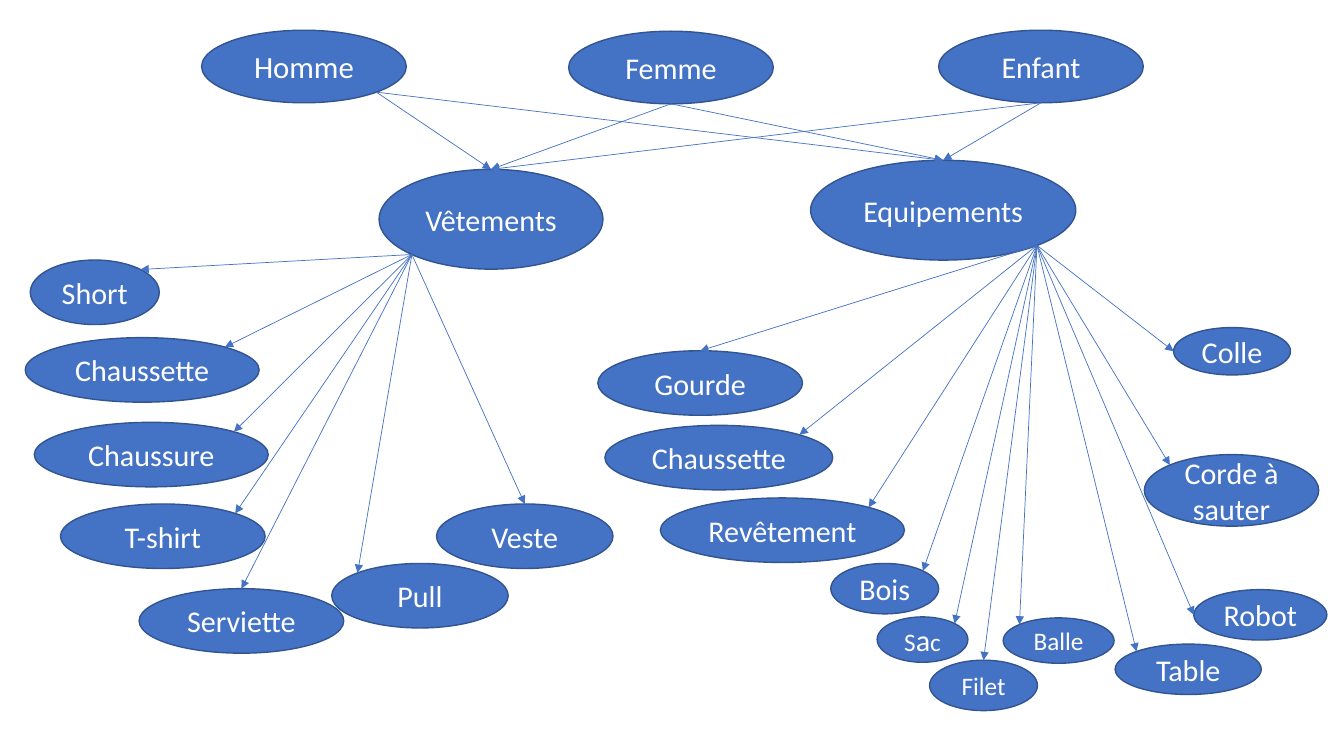
from math import sqrt

from lxml.etree import SubElement
from pptx import Presentation
from pptx.dml.color import RGBColor
from pptx.enum.shapes import MSO_CONNECTOR as CONN, MSO_SHAPE as SHAPE
from pptx.enum.text import MSO_ANCHOR as ANCHOR, PP_ALIGN as ALIGN
from pptx.oxml.ns import qn
from pptx.util import Inches, Pt

BLUE = RGBColor(0x44, 0x72, 0xC4)
OUTLINE = RGBColor(0x32, 0x54, 0x91)
WHITE = RGBColor(0xFF, 0xFF, 0xFF)
FONT = "Calibri"
SIZE, SMALL = 21.5, 18

# The slide is a grid of square cells; boxes and nodes are given in cells
CELL = Inches(0.1)

# Points on an ellipse, as shares of its half width and half height
DIAG = 1 / sqrt(2)
POINTS = {
    "top": (0, -1), "left": (-1, 0), "bottom": (0, 1),
    "top left": (-DIAG, -DIAG), "top right": (DIAG, -DIAG),
    "bottom left": (-DIAG, DIAG), "bottom right": (DIAG, DIAG),
}

# Nodes: text, column, row, columns wide, rows high, linked point, font size
AUDIENCE_BOX = (20, 3)
AUDIENCE = [
    ("Homme", 0, 0, 20.3, 7.2, "bottom right", 22),
    ("Femme", 36.4, 0.1, 20.3, 7.2, "bottom", SIZE),
    ("Enfant", 73.1, 0, 20.3, 7.2, "bottom", SIZE),
]
CLOTHES_BOX = (2.5, 16.8)
CLOTHES = [
    ("Vêtements", 35.1, 0, 22.2, 9.9, "bottom left", SIZE),
    ("Short", 0.5, 9, 12.8, 6.4, "top right", SIZE),
    ("Chaussette", 0, 16.7, 23.2, 6.4, "top right", SIZE),
    ("Chaussure", 0.9, 25.1, 23.2, 6.4, "top right", SIZE),
    ("T-shirt", 3.5, 33.2, 20.3, 6.4, "top right", SIZE),
    ("Serviette", 11.3, 41.6, 20.3, 6.4, "top", SIZE),
    ("Pull", 30.4, 39.1, 17.5, 6.4, "top left", SIZE),
    ("Veste", 40.8, 33.2, 17.5, 6.4, "top", SIZE),
]
EQUIPMENT_BOX = (59.3, 15.9)
EQUIPMENT = [
    ("Equipements", 21.1, 0, 26.3, 9.9, "bottom right", SIZE),
    ("Gourde", 0, 18.9, 20.3, 6.4, "top", SIZE),
    ("Bois", 23.1, 40, 10.7, 5, "top right", SIZE),
    ("Revêtement", 6.2, 33.5, 24.2, 6.4, "top right", SIZE),
    ("Filet", 32.9, 49.6, 10.7, 5, "top", SMALL),
    ("Balle", 40.2, 45.4, 11, 4.5, "top left", SMALL),
    ("Table", 51.3, 48, 14.5, 5, "top left", SIZE),
    ("Robot", 59.1, 42.6, 13.2, 5, "left", SIZE),
    ("Colle", 57.1, 16.6, 11.6, 4.7, "left", SIZE),
    ("Sac", 27.7, 45.3, 9, 4.5, "top right", (SMALL, SIZE, SMALL)),
    ("Chaussette", 0.7, 26.3, 22.6, 6.4, "top right", SIZE),
    ("Corde à sauter", 54.2, 29.2, 17.3, 7.1, "top left", SIZE),
]


def add_node(s, text, x, y, w, h, size):
    sp = s.shapes.add_shape(SHAPE.OVAL, *(round(v * CELL) for v in (x, y, w, h)))
    sp.shadow.inherit = False
    sp.fill.solid()
    sp.fill.fore_color.rgb = BLUE
    sp.line.color.rgb = OUTLINE
    sp.line.width = Pt(1)
    tf = sp.text_frame
    tf.word_wrap = True
    tf.vertical_anchor = ANCHOR.MIDDLE
    tf.margin_left = tf.margin_right = tf.margin_top = tf.margin_bottom = 0
    p = tf.paragraphs[0]
    p.alignment = ALIGN.CENTER
    p.font.name = FONT
    p.font.color.rgb = WHITE
    if isinstance(size, tuple):  # one size per letter
        for letter, points in zip(text, size):
            r = p.add_run()
            r.text = letter
            r.font.size = Pt(points)
    else:
        p.add_run().text = text
        p.font.size = Pt(size)
    return sp


def point_on(sp, name):
    dx, dy = POINTS[name]
    return (round(sp.left + sp.width * (1 + dx) / 2),
            round(sp.top + sp.height * (1 + dy) / 2))


def add_arrow(s, source, target):
    (start, start_point), (end, end_point) = source, target
    c = s.shapes.add_connector(CONN.STRAIGHT, *point_on(start, start_point),
                               *point_on(end, end_point))
    if end_point == "top":
        c.end_connect(end, 0)
    c.line.color.rgb = BLUE
    c.line.width = Pt(0.5)
    SubElement(c.line._get_or_add_ln(), qn("a:tailEnd"), type="triangle")
    SubElement(c._element.spPr, qn("a:effectLst"))


def add_group(s, box, nodes):
    """Draw the nodes inside the box; return each with its linked point."""
    left, top = box
    return [(add_node(s, text, left + x, top + y, w, h, size), point)
            for text, x, y, w, h, point, size in nodes]


def build_slide(prs):
    s = prs.slides.add_slide(prs.slide_layouts[6])

    # Nodes
    audience = add_group(s, AUDIENCE_BOX, AUDIENCE)
    categories = [add_group(s, CLOTHES_BOX, CLOTHES),
                  add_group(s, EQUIPMENT_BOX, EQUIPMENT)]

    # Arrows from everyone to each category, then on to its items
    for category, *items in categories:
        for person in audience:
            add_arrow(s, person, (category[0], "top"))
        for item in items:
            add_arrow(s, category, item)


def main():
    prs = Presentation()
    prs.slide_width, prs.slide_height = Inches(13.33), Inches(7.5)
    build_slide(prs)
    prs.save("out.pptx")


if __name__ == "__main__":
    main()
